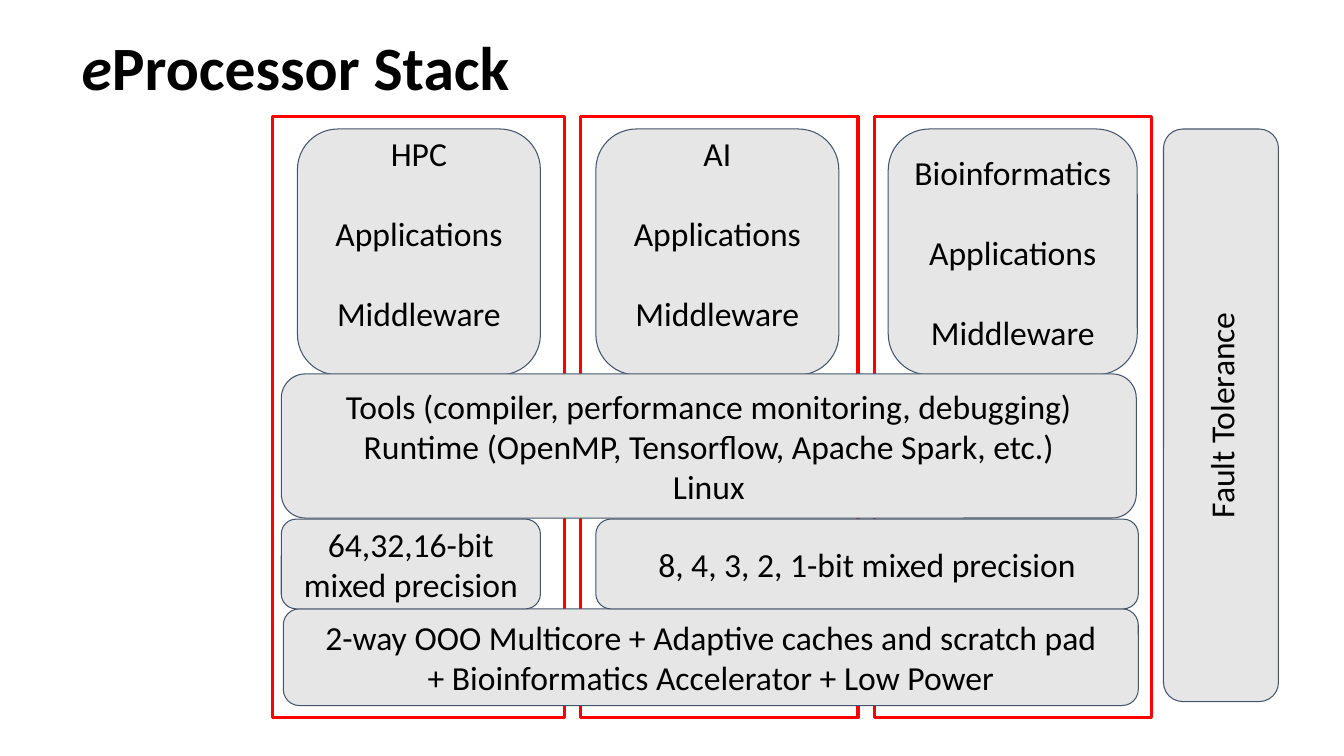
import pptx
import pptx.dml.color
import pptx.enum.shapes
import pptx.enum.text
import pptx.util

Inches = pptx.util.Inches
Pt = pptx.util.Pt
SHAPES = pptx.enum.shapes.MSO_SHAPE
ALIGN = pptx.enum.text.PP_ALIGN
ANCHOR = pptx.enum.text.MSO_ANCHOR

BLACK = pptx.dml.color.RGBColor(0x00, 0x00, 0x00)
RED = pptx.dml.color.RGBColor(0xFF, 0x00, 0x00)
GREY = pptx.dml.color.RGBColor(0xE7, 0xE6, 0xE6)
SLATE = pptx.dml.color.RGBColor(0x44, 0x54, 0x6A)

FONT = "Calibri"
INSET = 0.13
BLANK_LINE = Pt(28.5)


def set_insets(frame, horizontal, top, bottom):
    """Set the text margins of a frame, in inches."""
    frame.margin_left = frame.margin_right = Inches(horizontal)
    frame.margin_top, frame.margin_bottom = Inches(top), Inches(bottom)


def add_block(page, box, lines, gap=Pt(0), top=INSET, bottom=INSET):
    """Add a grey rounded block with centred lines of text."""
    block = page.shapes.add_shape(SHAPES.ROUNDED_RECTANGLE, *map(Inches, box))
    block.shadow.inherit = False
    block.fill.solid()
    block.fill.fore_color.rgb = GREY
    block.line.color.rgb = SLATE
    block.line.width = Pt(0.75)
    frame = block.text_frame
    frame.word_wrap = True
    frame.vertical_anchor = ANCHOR.MIDDLE
    set_insets(frame, INSET, top, bottom)
    frame.text = "\n".join(lines)
    for index, para in enumerate(frame.paragraphs):
        para.alignment = ALIGN.CENTER
        para.space_before = gap if index else Pt(0)
        for span in para.runs:
            span.font.name = FONT
            span.font.size = Pt(24)
            span.font.color.rgb = BLACK
    return block


def draw_title(page, box):
    """Write the slide title with its italic first letter."""
    title = page.shapes.add_textbox(*map(Inches, box))
    frame = title.text_frame
    frame.word_wrap = True
    frame.vertical_anchor = ANCHOR.MIDDLE
    set_insets(frame, INSET, 0.07, 0.07)
    para = frame.paragraphs[0]
    para.line_spacing = 0.9
    for text, italic in (("e", True), ("Processor Stack", False)):
        span = para.add_run()
        span.text = text
        span.font.name = FONT
        span.font.size = Pt(44)
        span.font.bold = True
        span.font.italic = italic
        span.font.color.rgb = BLACK


def draw_columns(page, box):
    """Outline the three domain columns in red."""
    left, top, _, height = box
    for offset, width in ((0, 2.9), (3.06, 2.75), (5.97, 2.75)):
        column = page.shapes.add_shape(
            SHAPES.RECTANGLE, *map(Inches, (left + offset, top, width, height)))
        column.shadow.inherit = False
        column.fill.background()
        column.line.color.rgb = RED
        column.line.width = Pt(2.25)


def draw_applications(page, box):
    """Place the application block at the head of each column."""
    left, top, _, _ = box
    for domain, offset, width, inset_top, inset_bottom in (
            ("HPC", 0.25, 2.41, 0, 0.37),
            ("AI", 3.21, 2.41, 0, 0.37),
            ("Bioinformatics", 6.11, 2.47, INSET, INSET)):
        add_block(page, (left + offset, top + 0.12, width, 2.44),
                  (domain, "Applications", "Middleware"),
                  BLANK_LINE, inset_top, inset_bottom)


def draw_layers(page, box):
    """Place the software, precision and hardware layers across the columns."""
    left, top, _, _ = box
    for x, y, width, height, lines in (
            (0.09, 2.55, 8.48, 1.43,
             ("Tools (compiler, performance monitoring, debugging)",
              "Runtime (OpenMP, Tensorflow, Apache Spark, etc.)",
              "Linux")),
            (0.11, 4.88, 8.48, 0.96,
             ("2-way OOO Multicore + Adaptive caches and scratch pad",
              "+ Bioinformatics Accelerator + Low Power")),
            (0.09, 3.99, 2.57, 0.89, ("64,32,16-bit mixed precision",)),
            (3.21, 3.99, 5.38, 0.89, ("8, 4, 3, 2, 1-bit mixed precision",))):
        add_block(page, (left + x, top + y, width, height), lines)


def draw_fault_tolerance(page, box):
    """Stand the fault tolerance block upright in its box."""
    left, top, width, height = box
    shift = (height - width) / 2
    bar = add_block(page, (left - shift, top + shift, height, width),
                    ("Fault Tolerance",))
    bar.rotation = 270


def main():
    """Build the slide and save it."""
    deck = pptx.Presentation()
    deck.slide_width, deck.slide_height = Inches(13.33), Inches(7.5)
    page = deck.slides.add_slide(deck.slide_layouts[6])
    stack = (2.7, 1.16, 8.72, 5.96)
    draw_title(page, (0.68, 0.24, 12, 0.92))
    draw_columns(page, stack)
    draw_applications(page, stack)
    draw_fault_tolerance(page, (11.54, 1.28, 1.14, 5.68))
    draw_layers(page, stack)
    deck.save("out.pptx")


if __name__ == "__main__":
    main()
